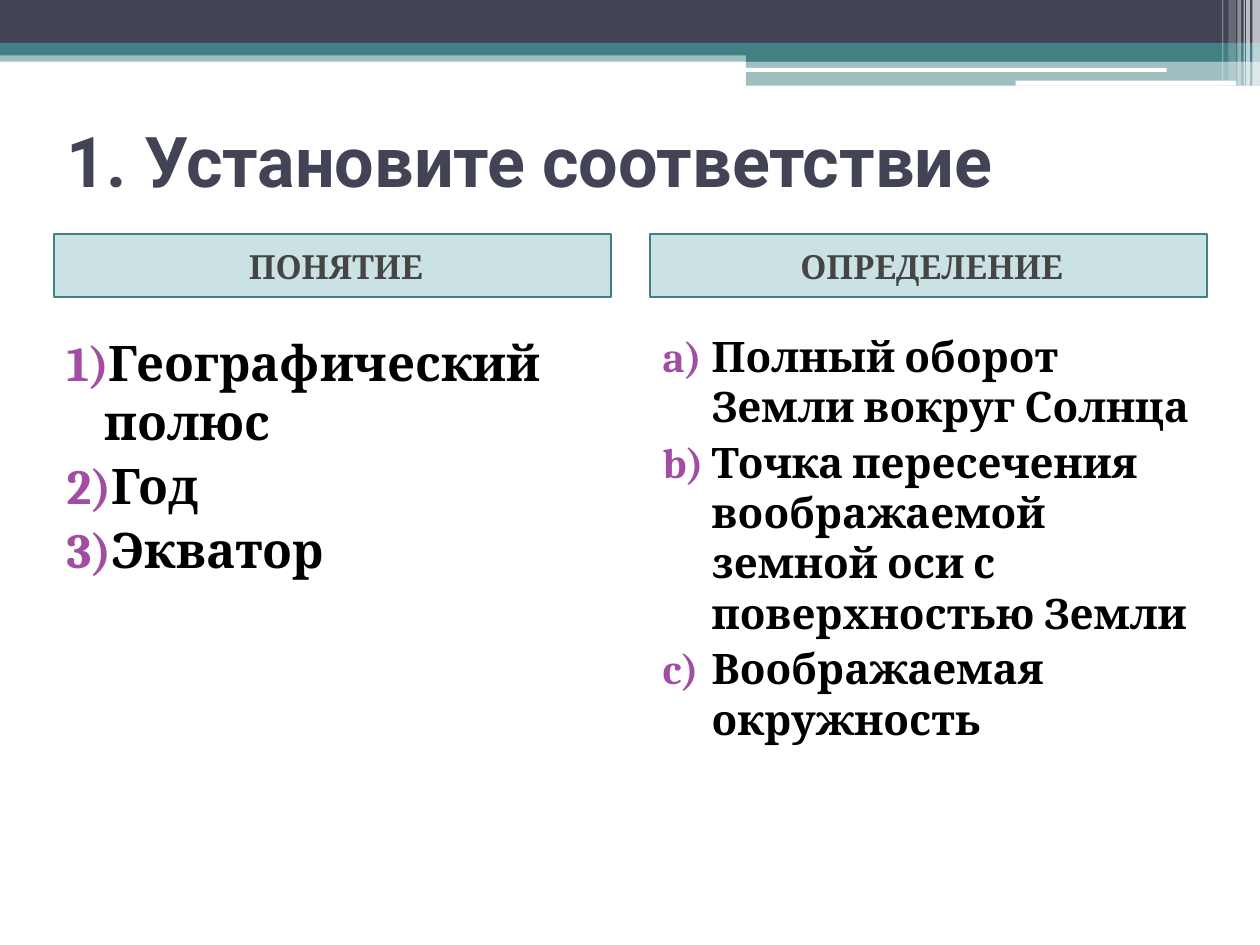
from lxml.etree import SubElement
from pptx import Presentation
from pptx.dml.color import RGBColor
from pptx.enum.shapes import MSO_SHAPE
from pptx.enum.text import MSO_ANCHOR, PP_ALIGN
from pptx.oxml.ns import qn
from pptx.util import Inches, Pt

COLORS = {
    "navy": "424456", "teal": "438086", "aqua": "328E97", "white": "FFFFFF",
    "gray": "454545", "black": "000000", "purple": "A04DA3",
}
TITLE = "1. Установите соответствие"
COLUMNS = [
    {"heading": "ПОНЯТИЕ", "numbering": "arabicParenR", "size": 28, "indent": 0.3, "top": 2.59,
     "items": ["Географический полюс", "Год", "Экватор"]},
    {"heading": "ОПРЕДЕЛЕНИЕ", "numbering": "alphaLcParenR", "size": 24, "indent": 0.39, "top": 2.57,
     "items": ["Полный оборот Земли вокруг Солнца",
               "Точка пересечения воображаемой земной оси с поверхностью Земли",
               "Воображаемая окружность"]},
]
WIDTH, HEIGHT = 10, 7.5
MARGIN, COLUMN_WIDTH, COLUMN_STEP = 0.43, 4.42, 4.73
BAND_LEFT = 5.92
BANDS = [
    (0, 0.4, WIDTH, 0.09, "teal", 50),
    (0, 0, WIDTH, 0.34, "navy", 100),
    (0, 0.34, WIDTH, 0.1, "teal", 100),
    (BAND_LEFT, 0.39, WIDTH - BAND_LEFT, 0.1, "teal", 100),
    (BAND_LEFT, 0.48, WIDTH - BAND_LEFT, 0.2, "teal", 50),
]
RULES = [(5.91, 0.54, 3.35, 0.03), (8.06, 0.64, 1.75, 0.04)]
STRIPES = [
    (9.94, 0.06, 0.68, 65), (9.89, 0.03, 0.68, 65), (9.87, 0.01, 0.68, 60),
    (9.82, 0.03, 0.68, 40), (9.75, 0.06, 0.64, 20), (9.7, 0.01, 0.64, 30),
]


def rgb(color):
    return RGBColor.from_string(COLORS[color])


def add_block(slide, box, color, opacity=100, outline=None, kind=MSO_SHAPE.RECTANGLE):
    block = slide.shapes.add_shape(kind, *map(Inches, box))
    block.shadow.inherit = False
    block.fill.solid()
    block.fill.fore_color.rgb = rgb(color)
    if opacity < 100:
        tint = block.fill._xPr.find(qn("a:solidFill"))[0]
        SubElement(tint, qn("a:alpha"), val=str(opacity * 1000))
    if outline:
        block.line.color.rgb = rgb(outline)
        block.line.width = Pt(1)
    else:
        block.line.fill.background()
    return block


def write(holder, lines, *, size, color, font="Cambria", align=PP_ALIGN.LEFT,
          anchor=MSO_ANCHOR.TOP, before=0, left=0, hanging=0, numbering=None):
    frame = holder.text_frame
    frame.word_wrap = True
    frame.vertical_anchor = anchor
    for index, line in enumerate(lines):
        paragraph = frame.paragraphs[0] if index == 0 else frame.add_paragraph()
        paragraph.alignment = align
        paragraph.space_before = Pt(before)
        run = paragraph.add_run()
        run.text = line
        run.font.size, run.font.name, run.font.bold = Pt(size), font, True
        run.font.color.rgb = rgb(color)
        properties = paragraph._p.get_or_add_pPr()
        properties.set("marL", str(Inches(left)))
        properties.set("indent", str(-Inches(hanging)))
        if numbering:
            bullet_color = SubElement(properties, qn("a:buClr"))
            SubElement(bullet_color, qn("a:srgbClr"), val=COLORS["purple"])
            SubElement(properties, qn("a:buFont"), typeface=font)
            SubElement(properties, qn("a:buAutoNum"), type=numbering)


def main():
    """Build the matching exercise slide."""
    deck = Presentation()
    deck.slide_width, deck.slide_height = Inches(WIDTH), Inches(HEIGHT)
    slide = deck.slides.add_slide(deck.slide_layouts[6])

    for *box, color, opacity in BANDS:
        add_block(slide, box, color, opacity)
    for box in RULES:
        add_block(slide, box, "white", kind=MSO_SHAPE.ROUNDED_RECTANGLE)
    for left, width, height, opacity in STRIPES:
        add_block(slide, (left, 0, width, height), "white", opacity)

    title = slide.shapes.add_textbox(*map(Inches, (MARGIN, 0.68, 9.17, 1.17)))
    write(title, [TITLE], size=40, color="navy", font="Roboto", anchor=MSO_ANCHOR.MIDDLE)

    for index, column in enumerate(COLUMNS):
        left = MARGIN + index * COLUMN_STEP
        heading = add_block(slide, (left, 1.86, COLUMN_WIDTH, 0.5), "aqua", 25, "teal")
        write(heading, [column["heading"]], size=19, color="gray", align=PP_ALIGN.CENTER,
              anchor=MSO_ANCHOR.MIDDLE, before=3, left=0.05)
        answers = slide.shapes.add_textbox(*map(Inches, (left, column["top"], COLUMN_WIDTH, 4.25)))
        write(answers, column["items"], size=column["size"], color="black", before=3,
              left=column["indent"], hanging=column["indent"], numbering=column["numbering"])

    deck.save("out.pptx")


if __name__ == "__main__":
    main()
